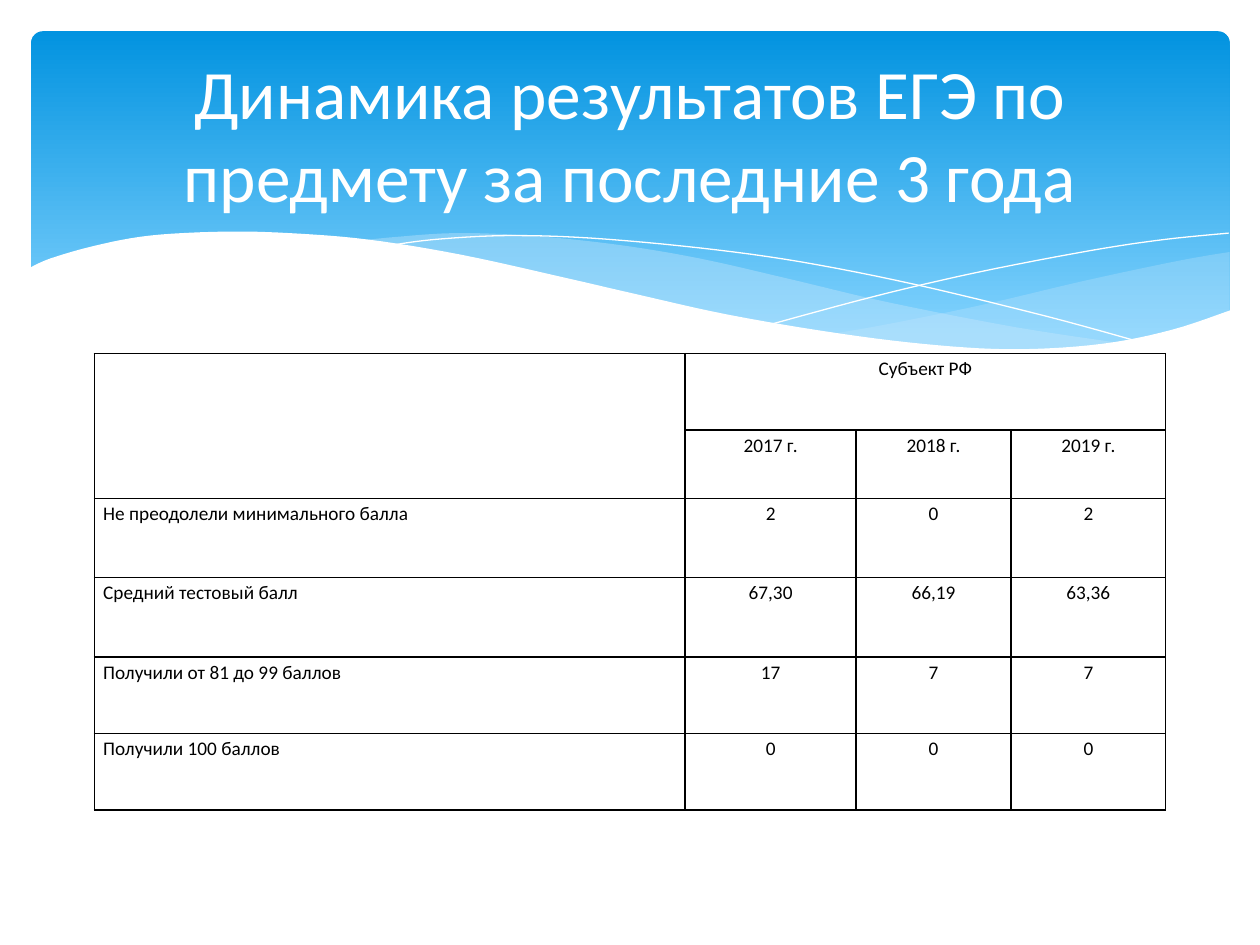
from lxml.etree import SubElement
from pptx import Presentation
from pptx.dml.color import RGBColor
from pptx.enum.shapes import MSO_SHAPE as Shape
from pptx.enum.text import MSO_ANCHOR as Anchor, PP_ALIGN as Align
from pptx.oxml.ns import qn
from pptx.util import Cm, Pt

FONT = "Calibri"
COLORS = {
    "sky_top": "0293E0",
    "sky_bottom": "83D3FE",
    "mist": "C6E7FC",
    "white": "FFFFFF",
    "black": "000000",
}

TITLE = "Динамика результатов ЕГЭ по предмету за последние 3 года"
REGION = "Субъект РФ"
YEARS = ["2017 г.", "2018 г.", "2019 г."]
RESULTS = [
    ("Не преодолели минимального балла", "2", "0", "2"),
    ("Средний тестовый балл", "67,30", "66,19", "63,36"),
    ("Получили от 81 до 99 баллов", "17", "7", "7"),
    ("Получили 100 баллов", "0", "0", "0"),
]
COLUMN_WIDTHS = [11.91, 3.45, 3.12, 3.12]
ROW_HEIGHTS = [1.54, 1.38, 1.59, 1.61, 1.54, 1.54]

# Wave outlines, in centimetres
RIGHT_CREST = [(24.79, 5.08), (23.75, 5.26), (21.87, 5.66), (19.79, 6.15),
               (17.93, 6.53), (16.79, 6.73)]
RIGHT_TROUGH = [(16.79, 6.73), (18.26, 6.91), (19.84, 7.04), (21.21, 7.04),
                (22.58, 6.91), (23.75, 6.65), (24.79, 6.27)]
MIDDLE_CREST = [(22.68, 6.93), (20.5, 6.6), (17.93, 6.1), (15.98, 5.64),
                (14.1, 5.21), (12.42, 4.93), (10.67, 4.75), (9.17, 4.7),
                (7.95, 4.78), (7.26, 4.85)]
MIDDLE_TROUGH = [(7.26, 4.85), (8.69, 5.05), (10.26, 5.36), (11.4, 5.64),
                 (13.46, 6.1), (15.27, 6.48), (17.27, 6.81), (19, 7.01),
                 (20.5, 7.06), (21.54, 7.04), (22.68, 6.93)]
FALLING_LINE = [(7.85, 4.95), (8.74, 4.83), (10.19, 4.75), (11.91, 4.8),
                (14.12, 5), (16.15, 5.28), (18.47, 5.74), (21.11, 6.38),
                (23.04, 6.91)]
RISING_LINE = [(15.57, 6.53), (17.65, 5.97), (19.71, 5.49), (22, 5.05),
               (23.47, 4.83), (24.77, 4.7)]
FRONT_CREST = [(24.82, 6.25), (23.62, 6.65), (22.23, 6.93), (20.55, 7.04),
               (18.9, 6.96), (16.97, 6.73), (14.71, 6.35), (12.78, 5.92),
               (11.35, 5.59), (9.27, 5.13), (7.42, 4.83), (5.84, 4.7),
               (4.5, 4.67), (3.02, 4.75), (1.93, 4.95), (1.02, 5.21),
               (0.58, 5.41)]
FRONT_BASE = [(0.58, 8.36), (24.82, 8.36)]


def rgb(name):
    return RGBColor.from_string(COLORS[name])


def smooth(points, steps=6):
    """Catmull-Rom curve through the points, as a denser list of points."""
    padded = [points[0], *points, points[-1]]
    curve = [points[0]]
    for a, b, c, d in zip(padded, padded[1:], padded[2:], padded[3:]):
        for step in range(1, steps + 1):
            t = step / steps
            curve.append(tuple(
                (2 * q + (r - p) * t + (2 * p - 5 * q + 4 * r - s) * t ** 2
                 + (3 * q - p - 3 * r + s) * t ** 3) / 2
                for p, q, r, s in zip(a, b, c, d)))
    return curve


def add_outline(slide, points, close):
    start, *rest = [(Cm(x), Cm(y)) for x, y in points]
    builder = slide.shapes.build_freeform(*start)
    builder.add_line_segments(rest, close=close)
    outline = builder.convert_to_shape()
    outline.shadow.inherit = False
    return outline


def add_wave(slide, points, color, opacity=100):
    wave = add_outline(slide, points, close=True)
    wave.fill.solid()
    wave.fill.fore_color.rgb = rgb(color)
    wave.line.fill.background()
    if opacity < 100:
        tint = wave.fill._xPr.find(qn("a:solidFill"))[0]
        SubElement(tint, qn("a:alpha"), val=str(opacity * 1000))


def add_hairline(slide, points):
    hairline = add_outline(slide, smooth(points), close=False)
    hairline.fill.background()
    hairline.line.color.rgb = rgb("white")
    hairline.line.width = Pt(0)


def add_sky(slide):
    sky = slide.shapes.add_shape(
        Shape.ROUNDED_RECTANGLE, Cm(0.63), Cm(0.63), Cm(24.16), Cm(6.86))
    sky.adjustments[0] = 0.034
    sky.shadow.inherit = False
    sky.line.fill.background()
    sky.fill.gradient()
    sky.fill.gradient_angle = 270
    stops = [("sky_top", 0), ("sky_bottom", 0.9)]
    for stop, (color, position) in zip(sky.fill.gradient_stops, stops):
        stop.color.rgb = rgb(color)
        stop.position = position


def write(frame, text, size, color, align):
    paragraph = frame.paragraphs[0]
    paragraph.text = text
    paragraph.alignment = align
    paragraph.font.name = FONT
    paragraph.font.size = Pt(size)
    paragraph.font.color.rgb = rgb(color)
    return paragraph


def add_title(slide):
    frame = slide.shapes.add_textbox(
        Cm(1.27), Cm(0.94), Cm(22.86), Cm(3.48)).text_frame
    frame.word_wrap = True
    frame.vertical_anchor = Anchor.MIDDLE
    write(frame, TITLE, 39.6, "white", Align.CENTER)


def style_cell(cell):
    """Thin black borders, no fill, narrow margins."""
    properties = cell._tc.get_or_add_tcPr()
    for side in ("lnL", "lnR", "lnT", "lnB"):
        border = SubElement(properties, qn(f"a:{side}"), w=str(Pt(1)))
        fill = SubElement(border, qn("a:solidFill"))
        SubElement(fill, qn("a:srgbClr"), val=COLORS["black"])
    cell.fill.background()
    cell.margin_left = cell.margin_right = Cm(0.18)
    cell.margin_top = cell.margin_bottom = 0


def add_results(slide):
    rows = [("", REGION, "", ""), ("", *YEARS), *RESULTS]
    table = slide.shapes.add_table(
        len(rows), len(COLUMN_WIDTHS), Cm(1.9), Cm(7.13),
        Cm(sum(COLUMN_WIDTHS)), Cm(sum(ROW_HEIGHTS))).table
    table.first_row = table.horz_banding = False
    for column, width in zip(table.columns, COLUMN_WIDTHS):
        column.width = Cm(width)
    for row, height in zip(table.rows, ROW_HEIGHTS):
        row.height = Cm(height)
    table.cell(0, 0).merge(table.cell(1, 0))
    table.cell(0, 1).merge(table.cell(0, 3))
    for row, texts in enumerate(rows):
        for column, text in enumerate(texts):
            cell = table.cell(row, column)
            style_cell(cell)
            if text:
                align = Align.CENTER if column else Align.JUSTIFY
                paragraph = write(cell.text_frame, text, 11, "black", align)
                paragraph.line_spacing = 1.15


def main():
    deck = Presentation()
    deck.slide_width, deck.slide_height = Cm(25.4), Cm(19.05)
    slide = deck.slides.add_slide(deck.slide_layouts[6])
    add_sky(slide)
    add_wave(slide, smooth(RIGHT_CREST) + smooth(RIGHT_TROUGH), "mist", 29)
    add_wave(slide, smooth(MIDDLE_CREST) + smooth(MIDDLE_TROUGH), "mist", 40)
    add_hairline(slide, FALLING_LINE)
    add_hairline(slide, RISING_LINE)
    add_wave(slide, smooth(FRONT_CREST) + FRONT_BASE, "white")
    add_title(slide)
    add_results(slide)
    deck.save("out.pptx")


if __name__ == "__main__":
    main()
